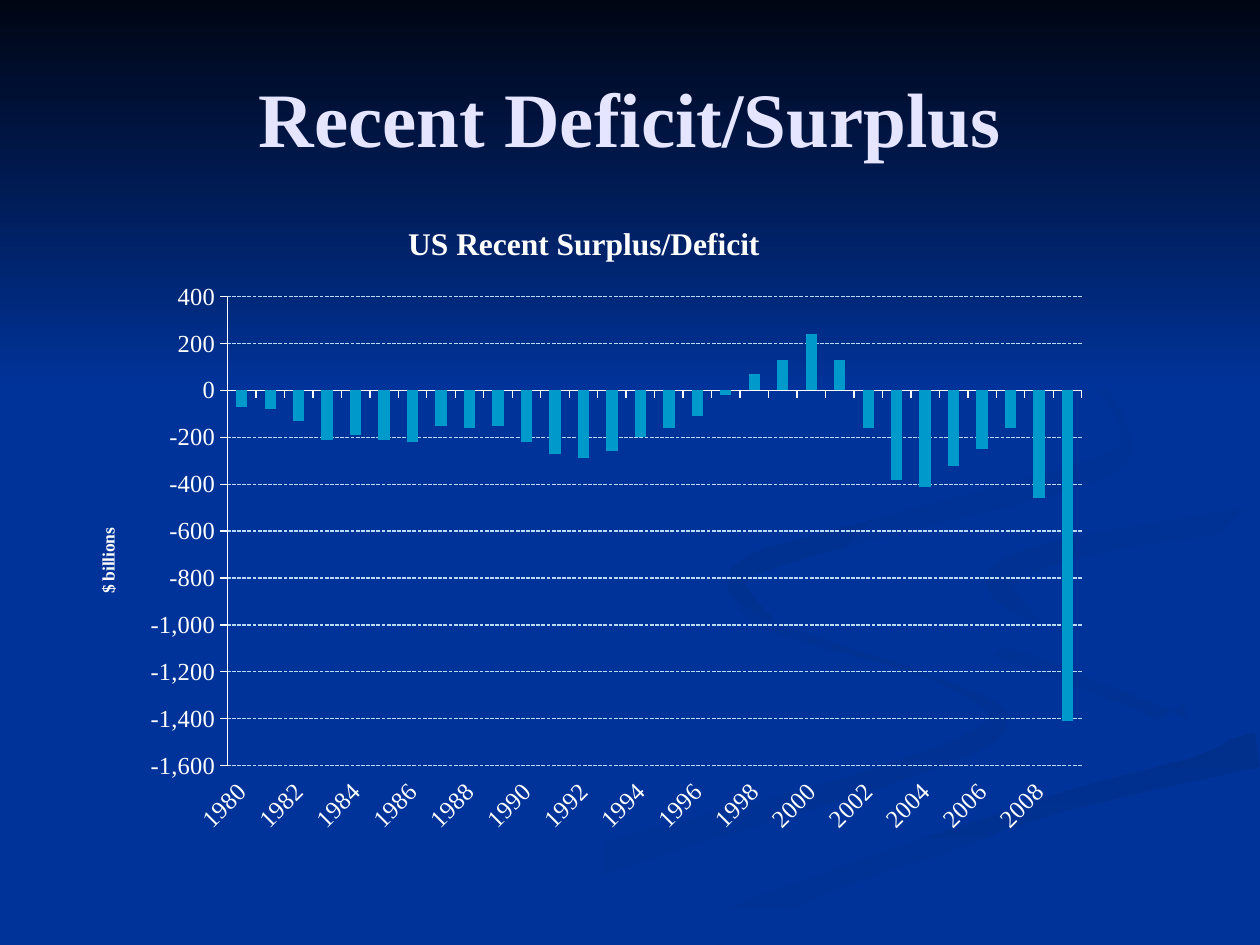
from collections import namedtuple
from dataclasses import dataclass
from math import hypot

from pptx import Presentation
from pptx.chart.data import CategoryChartData
from pptx.dml.color import RGBColor
from pptx.enum.chart import XL_CHART_TYPE as ChartType
from pptx.enum.chart import XL_TICK_LABEL_POSITION as LabelPosition
from pptx.enum.chart import XL_TICK_MARK as TickMark
from pptx.enum.dml import MSO_LINE_DASH_STYLE as Dash
from pptx.enum.shapes import MSO_SHAPE as Preset
from pptx.enum.text import MSO_ANCHOR as Anchor
from pptx.enum.text import PP_ALIGN as Align
from pptx.oxml import parse_xml
from pptx.oxml.ns import nsdecls, qn
from pptx.util import Inches, Pt

Box = namedtuple("Box", "left top width height")
Station = namedtuple("Station", "column row breadth")
Ribbon = namedtuple("Ribbon", "start_colour end_colour angle stations")

COLUMNS, ROWS = 1000, 750
WIDTH, HEIGHT = Inches(10), Inches(7.5)
UNIT = WIDTH // COLUMNS
CURVE_STEPS = 5  # points drawn between two stations of a ribbon


@dataclass(frozen=True)
class Theme:
    font: str = "Times New Roman"
    background: str = "003399"
    night: str = "000514"
    heading: str = "E5E5FF"
    text: str = "FFFFFF"
    bar: str = "0099CC"
    grid: str = "BADAF5"
    shade: str = "003193"
    deep_shade: str = "002F8C"
    heading_size: int = 44
    chart_title_size: int = 18
    tick_size: int = 14
    small_size: int = 10


THEME = Theme()

# Each ribbon follows a smooth line through a few (column, row, breadth) stations.
RIBBONS = {
    "front curl": Ribbon(THEME.background, THEME.shade, 0, [
        (575, 460, 1), (608, 495, 9), (740, 538, 3), (792, 575, 16),
        (690, 620, 16), (478, 682, 25), (330, 749, 45)]),
    "middle curl": Ribbon(THEME.background, THEME.shade, 45, [
        (724, 464, 1), (755, 502, 6), (834, 528, 17),
        (919, 558, 24), (931, 577, 25), (894, 605, 1)]),
    "lower sweep": Ribbon(THEME.deep_shade, THEME.background, 90, [
        (999, 595, 28), (842, 635, 18), (758, 660, 26),
        (640, 702, 25), (545, 748, 40)]),
    "broad curl": Ribbon(THEME.background, THEME.background, 0, [
        (999, 394, 15), (838, 420, 14), (753, 465, 50), (846, 514, 30),
        (965, 562, 50), (835, 622, 18), (600, 700, 22), (490, 748, 30)]),
    "upper hook": Ribbon(THEME.shade, THEME.background, 45, [
        (999, 411, 18), (905, 425, 16), (830, 441, 18),
        (793, 463, 22), (826, 496, 1)]),
    "back curl": Ribbon(THEME.deep_shade, THEME.background, 45, [
        (762, 233, 1), (845, 277, 4), (892, 340, 6), (866, 374, 17),
        (690, 421, 15), (586, 456, 16), (622, 500, 1)]),
}

FIRST_YEAR = 1980
BALANCES = [-70, -80, -130, -210, -190, -210, -220, -150, -160, -150,
            -220, -270, -290, -260, -200, -160, -110, -20, 70, 130,
            240, 130, -160, -380, -410, -320, -250, -160, -460, -1410]


def rgb(colour):
    return RGBColor.from_string(colour)


def apply_format(target, values):
    for name, value in values.items():
        setattr(target, name, value)


def style_font(font, size, colour=THEME.text, bold=False):
    apply_format(font, {"name": THEME.font, "size": Pt(size), "bold": bold})
    font.color.rgb = rgb(colour)


def fill_solid(fill, colour):
    fill.solid()
    fill.fore_color.rgb = rgb(colour)


def fill_gradient(shape, start_colour, end_colour, angle):
    """Fill without outline or shadow; the angle turns clockwise."""
    shape.shadow.inherit = False
    shape.line.fill.background()
    shape.fill.gradient()
    shape.fill.gradient_angle = -angle % 360
    for stop, colour in zip(shape.fill.gradient_stops, (start_colour, end_colour)):
        stop.color.rgb = rgb(colour)


def smooth_line(stations):
    """Join the stations by a Catmull-Rom curve, blending breadth as well."""
    padded = [stations[0], *stations, stations[-1]]
    line = []
    for before, start, end, after in zip(padded, padded[1:], padded[2:], padded[3:]):
        for step in range(CURVE_STEPS):
            t = step / CURVE_STEPS
            line.append(Station(*(
                b + t / 2 * (c - a + t * (2 * a - 5 * b + 4 * c - d
                                          + t * (3 * (b - c) + d - a)))
                for a, b, c, d in zip(before, start, end, after))))
    return line + [Station(*stations[-1])]


def ribbon_outline(stations):
    """Run down one side of the smooth line and back up the other."""
    line = smooth_line(stations)
    sides = ([], [])
    for index, point in enumerate(line):
        previous, following = line[max(index - 1, 0)], line[min(index + 1, len(line) - 1)]
        run, rise = following.column - previous.column, following.row - previous.row
        reach = point.breadth / 2 / hypot(run, rise)
        for side, sign in zip(sides, (1, -1)):
            column = point.column - sign * reach * rise
            row = point.row + sign * reach * run
            side.append((min(max(column, 0), COLUMNS), min(max(row, 0), ROWS)))
    return sides[0] + sides[1][::-1]


def add_ribbons(slide, box):
    for ribbon in RIBBONS.values():
        outline = ribbon_outline(ribbon.stations)
        builder = slide.shapes.build_freeform(*outline[0], scale=box.width / COLUMNS)
        builder.add_line_segments(outline[1:], close=True)
        shape = builder.convert_to_shape(box.left, box.top)
        fill_gradient(shape, ribbon.start_colour, ribbon.end_colour, ribbon.angle)


def add_night_sky(slide, box):
    sky = slide.shapes.add_shape(Preset.RECTANGLE, *box)
    fill_gradient(sky, THEME.night, THEME.background, 90)


def add_heading(slide, box, text):
    frame = slide.shapes.add_textbox(*box).text_frame
    apply_format(frame, {"word_wrap": True, "vertical_anchor": Anchor.MIDDLE})
    paragraph = frame.paragraphs[0]
    apply_format(paragraph, {"text": text, "alignment": Align.CENTER})
    style_font(paragraph.runs[0].font, THEME.heading_size, THEME.heading, bold=True)


def place_manually(element, shares, inner=False):
    """Fix a chart part at shares (x, y and maybe w, h) of the chart's box."""
    for old in element.findall(qn("c:layout")):
        element.remove(old)
    target = '<c:layoutTarget val="inner"/>' if inner else ""
    modes = "".join(f'<c:{key}Mode val="edge"/>' for key in "xy")
    values = "".join(f'<c:{key} val="{share}"/>' for key, share in zip("xywh", shares))
    layout = parse_xml(f'<c:layout {nsdecls("c")}><c:manualLayout>'
                       f"{target}{modes}{values}</c:manualLayout></c:layout>")
    element.insert(0 if element.find(qn("c:tx")) is None else 1, layout)


def add_chart_title(owner, title, text, size, shares):
    title.text_frame.text = text
    style_font(title.text_frame.paragraphs[0].runs[0].font, size, bold=True)
    place_manually(owner.find(qn("c:title")), shares)


def style_axis(axis):
    apply_format(axis, {"major_tick_mark": TickMark.OUTSIDE,
                        "minor_tick_mark": TickMark.NONE})
    style_font(axis.tick_labels.font, THEME.tick_size)
    axis.format.line.color.rgb = rgb(THEME.text)
    axis.format.line.width = Pt(0.75)


def style_category_axis(axis):
    """Slant the years and label every second one."""
    style_axis(axis)
    axis.tick_label_position = LabelPosition.LOW
    element = axis._element
    element.find(qn("c:txPr")).find(qn("a:bodyPr")).set("rot", "-2700000")
    last = element.find(qn("c:noMultiLvlLbl"))
    for tag, step in (("tickLblSkip", 2), ("tickMarkSkip", 1)):
        last.addprevious(parse_xml(f'<c:{tag} {nsdecls("c")} val="{step}"/>'))


def style_value_axis(axis):
    style_axis(axis)
    apply_format(axis, {"minimum_scale": -1600, "maximum_scale": 400,
                        "major_unit": 200, "has_major_gridlines": True})
    apply_format(axis.tick_labels, {"number_format": "#,##0",
                                    "number_format_is_linked": False})
    line = axis.major_gridlines.format.line
    line.color.rgb = rgb(THEME.grid)
    apply_format(line, {"width": Pt(0.75), "dash_style": Dash.SQUARE_DOT})
    add_chart_title(axis._element, axis.axis_title, "$ billions",
                    THEME.small_size, (0.02, 0.5))


def add_balance_chart(slide, box):
    data = CategoryChartData()
    data.categories = [str(FIRST_YEAR + index) for index in range(len(BALANCES))]
    data.add_series("Series 1", BALANCES)
    chart = slide.shapes.add_chart(ChartType.COLUMN_CLUSTERED, *box, data).chart
    style_font(chart.font, THEME.small_size)
    chart.has_legend = False
    element = chart._chartSpace.chart
    add_chart_title(element, chart.chart_title, "US Recent Surplus/Deficit",
                    THEME.chart_title_size, (0.32, 0.03))
    plot = chart.plots[0]
    apply_format(plot, {"gap_width": 150, "vary_by_categories": False})
    plot.series[0].invert_if_negative = False
    fill_solid(plot.series[0].format.fill, THEME.bar)
    style_category_axis(chart.category_axis)
    style_value_axis(chart.value_axis)
    place_manually(element.plotArea, (0.15, 0.15, 0.83, 0.72), inner=True)


def grid_box(*cells):
    return Box(*(cell * UNIT for cell in cells))


def main():
    presentation = Presentation()
    apply_format(presentation, {"slide_width": WIDTH, "slide_height": HEIGHT})
    slide = presentation.slides.add_slide(presentation.slide_layouts[6])
    fill_solid(slide.background.fill, THEME.background)
    add_ribbons(slide, grid_box(0, 0, COLUMNS, ROWS))
    add_night_sky(slide, grid_box(0, 0, COLUMNS, 308))
    add_heading(slide, grid_box(50, 30, 900, 125), "Recent Deficit/Surplus")
    add_balance_chart(slide, grid_box(58, 158, 817, 517))
    presentation.save("out.pptx")


if __name__ == "__main__":
    main()
